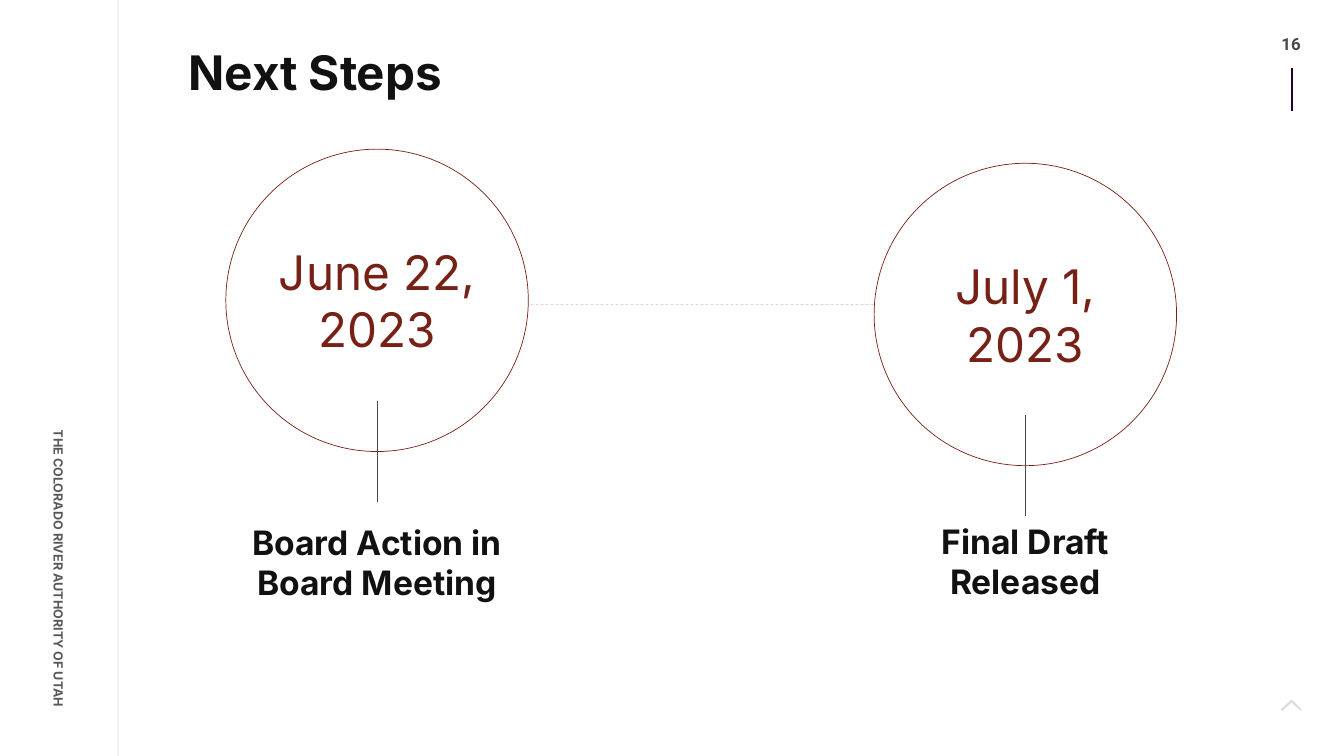
from pptx import Presentation
from pptx.dml.color import RGBColor
from pptx.enum import dml, shapes, text
from pptx.oxml import ns, xmlchemy
from pptx.util import Inches, Pt

INK = RGBColor(0x11, 0x11, 0x11)
GRAY = RGBColor(0x49, 0x49, 0x4B)
RUST = RGBColor(0x77, 0x21, 0x16)
PLUM = RGBColor(0x22, 0x00, 0x33)
WHITE = RGBColor(0xFF, 0xFF, 0xFF)
MID = text.PP_ALIGN.CENTER


def fade(item, rate):
    """Make the colours of an item show at a percentage."""
    for tint in item._element.iter(ns.qn("a:srgbClr")):
        alpha = xmlchemy.OxmlElement("a:alpha")
        alpha.set("val", str(rate * 1000))
        tint.append(alpha)


def write(shape, words, size, color, align, bold=True, font="Inter",
          pad=(0, 0.05), wrap=True, anchor=text.MSO_ANCHOR.TOP):
    """Put one formatted paragraph into a shape."""
    frame = shape.text_frame
    frame.text = words
    frame.word_wrap = wrap
    frame.vertical_anchor = anchor
    frame.margin_left = frame.margin_right = Inches(pad[0])
    frame.margin_top = frame.margin_bottom = Inches(pad[1])
    para = frame.paragraphs[0]
    para.alignment = align
    face = para.runs[0].font
    face.name, face.size, face.bold = font, Pt(size), bold
    face.color.rgb = color
    return para


def add_text(slide, box, *args, **opts):
    """Add a text box and return it with its paragraph."""
    shape = slide.shapes.add_textbox(*map(Inches, box))
    return shape, write(shape, *args, **opts)


def add_line(slide, start, end, color, width=0.5):
    """Add a straight line between two points."""
    line = slide.shapes.add_connector(
        shapes.MSO_CONNECTOR.STRAIGHT, *map(Inches, start + end))
    line.line.color.rgb = color
    line.line.width = Pt(width)
    line._element.spPr.append(xmlchemy.OxmlElement("a:effectLst"))
    return line


def add_mark(slide):
    """Add the upward chevron in the corner."""
    first, *rest = [(12.81, 6.94), (12.91, 7.04), (12.9, 7.05),
                    (12.81, 6.97), (12.72, 7.05), (12.7, 7.04)]
    path = slide.shapes.build_freeform(*map(Inches, first))
    path.add_line_segments([(Inches(x), Inches(y)) for x, y in rest])
    mark = path.convert_to_shape()
    mark.shadow.inherit = False
    mark.fill.solid()
    mark.fill.fore_color.rgb = GRAY
    mark.line.fill.background()
    fade(mark, 20)


def add_step(slide, left, top, date, label, base):
    """Add a dated circle with its stem and label."""
    ring = slide.shapes.add_shape(
        shapes.MSO_SHAPE.OVAL, *map(Inches, (left, top, 3, 3)))
    ring.shadow.inherit = False
    ring.fill.solid()
    ring.fill.fore_color.rgb = WHITE
    ring.line.color.rgb = RUST
    ring.line.width = Pt(0.5)
    write(ring, date, 34, RUST, MID, bold=False, pad=(0, 0),
          anchor=text.MSO_ANCHOR.MIDDLE)
    add_text(slide, (left + 0.25, base, 2.5, 0.91), label, 24, INK, MID)
    stem = left + 1.5
    add_line(slide, (stem, top + 2.5), (stem, top + 3.5), GRAY)


def add_frame(slide):
    """Add the side rule, the side name and the page number."""
    name, _ = add_text(slide, (-0.84, 5.47, 2.84, 0.25),
                       "THE COLORADO RIVER AUTHORITY OF UTAH", 9, INK,
                       text.PP_ALIGN.RIGHT)
    name.rotation = 90
    fade(name, 70)
    fade(add_line(slide, (1.17, 0), (1.17, 7.5), GRAY), 20)
    add_line(slide, (12.81, 0.67), (12.81, 1.1), PLUM, 1.5)
    add_mark(slide)
    add_text(slide, (12.45, 0.26, 0.71, 0.36), "16", 12, GRAY, MID,
             font="Roboto", pad=(0.13, 0.07), wrap=False,
             anchor=text.MSO_ANCHOR.MIDDLE)


def main():
    """Build the slide and save it."""
    deck = Presentation()
    deck.slide_width, deck.slide_height = Inches(13.33), Inches(7.5)
    slide = deck.slides.add_slide(deck.slide_layouts[6])
    add_frame(slide)
    _, title = add_text(slide, (1.87, 0.44, 10, 0.84), "Next Steps", 34, INK,
                        text.PP_ALIGN.LEFT)
    title.line_spacing = 0.9
    link = add_line(slide, (4.32, 3.02), (8.86, 3.02), RUST)
    link.line.dash_style = dml.MSO_LINE.DASH
    fade(link, 30)
    add_step(slide, 2.24, 1.48, "June 22, 2023",
             "Board Action in Board Meeting", 5.13)
    add_step(slide, 8.67, 1.62, "July 1, 2023", "Final Draft Released", 5.12)
    deck.save("out.pptx")


if __name__ == "__main__":
    main()
